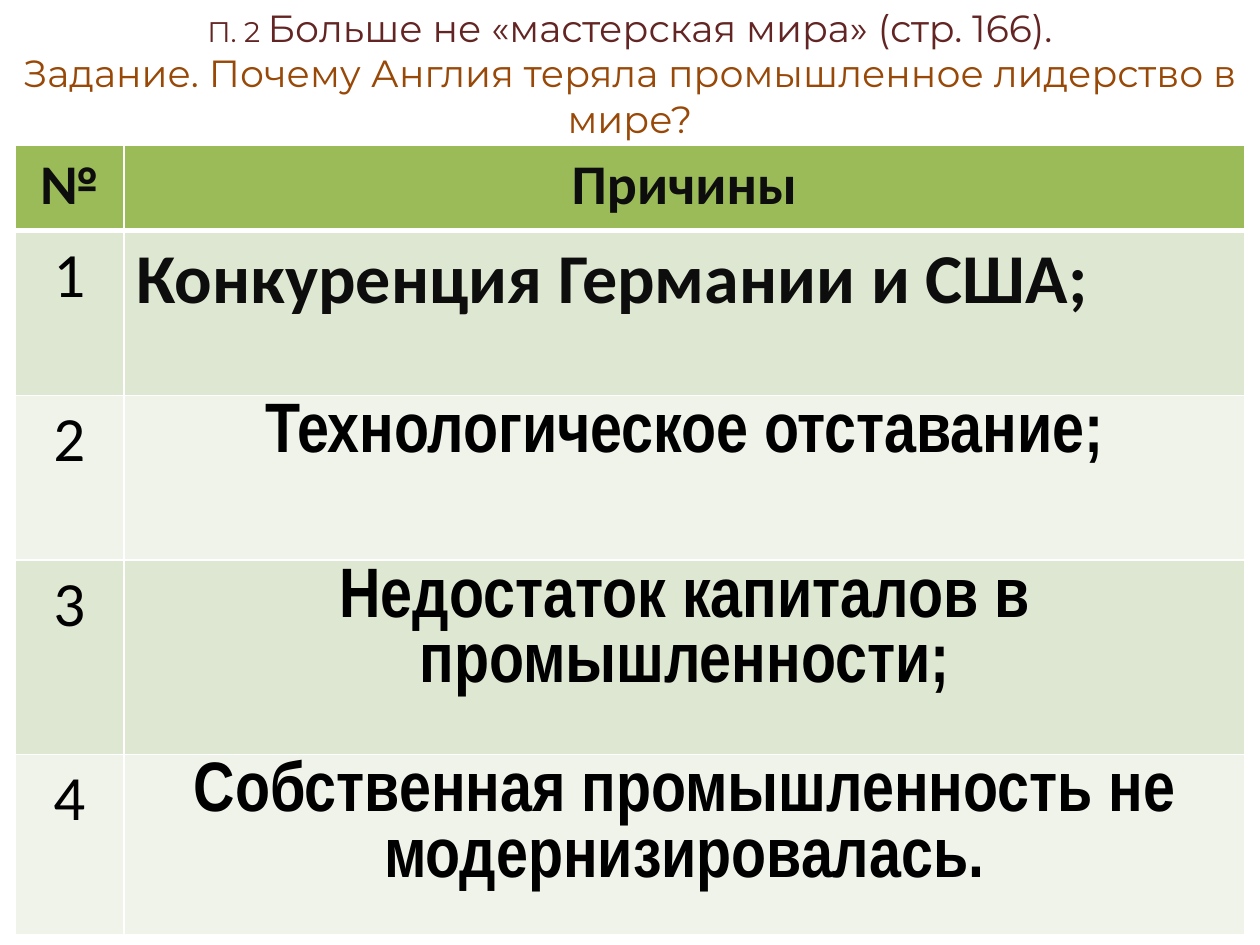
from lxml import etree
from pptx import Presentation
from pptx.dml.color import RGBColor
from pptx.enum.text import MSO_ANCHOR, PP_ALIGN
from pptx.oxml.ns import qn
from pptx.util import Cm, Pt

LEFT, CENTER = PP_ALIGN.LEFT, PP_ALIGN.CENTER
MIDDLE = MSO_ANCHOR.MIDDLE
BLACK, NEAR_BLACK = "000000", "0D0D0D"
GREEN, BANDS = "9BBB59", ("DEE7D1", "EFF3EA")


def style(font, name, size, color, bold=False):
    font.name, font.size, font.bold = name, Pt(size), bold
    font.color.rgb = RGBColor.from_string(color)


def add_borders(cell, top_width, bottom_width):
    """Draw white cell borders; they must precede the fill in the cell's XML."""
    properties = cell._tc.get_or_add_tcPr()
    widths = {"a:lnL": 1, "a:lnR": 1, "a:lnT": top_width, "a:lnB": bottom_width}
    for position, (tag, width) in enumerate(widths.items()):
        line = etree.Element(qn(tag), w=str(Pt(width)))
        fill = etree.SubElement(line, qn("a:solidFill"))
        etree.SubElement(fill, qn("a:srgbClr"), val="FFFFFF")
        properties.insert(position, line)


deck = Presentation()
deck.slide_width, deck.slide_height = Cm(25.4), Cm(19.05)
page = deck.slides.add_slide(deck.slide_layouts[6])

# Title
title = page.shapes.add_textbox(0, Cm(0.49), Cm(25.4), Cm(2.79)).text_frame
title.word_wrap = True
title.vertical_anchor = MIDDLE
title.margin_top, title.margin_bottom = 0, Cm(0.84)
heading, task = title.paragraphs[0], title.add_paragraph()
title_spans = [
    (heading, "П. 2 ", 16.2, "632523"),
    (heading, "Больше не «мастерская мира» (стр. 166).", 21.6, "632523"),
    (task, "Задание. Почему Англия теряла промышленное лидерство в мире?", 21.6, "984807"),
]
for para, text, size, color in title_spans:
    para.alignment = CENTER
    span = para.add_run()
    span.text = text
    style(span.font, "Montserrat", size, color)

# Table of reasons: text, font, colour, alignment
reasons = [
    ("Конкуренция Германии и США;", "Calibri", NEAR_BLACK, LEFT),
    ("Технологическое отставание;", "Arial Narrow", BLACK, CENTER),
    ("Недостаток капиталов в промышленности;", "Arial Narrow", BLACK, CENTER),
    ("Собственная промышленность не модернизировалась.", "Arial Narrow", BLACK, CENTER),
]
column_widths = (2.2, 22.6)
row_heights = (1.72, 3.32, 3.32, 3.92, 3.32)
table = page.shapes.add_table(
    len(row_heights), len(column_widths), Cm(0.3), Cm(2.93),
    Cm(sum(column_widths)), Cm(sum(row_heights))).table
for column, width in zip(table.columns, column_widths):
    column.width = Cm(width)
for row, height in zip(table.rows, row_heights):
    row.height = Cm(height)

for index, text in enumerate(("№", "Причины")):
    para = table.cell(0, index).text_frame.paragraphs[0]
    para.text, para.alignment = text, CENTER
    style(para.font, "Calibri", 32, NEAR_BLACK, True)

for number, (text, font_name, color, alignment) in enumerate(reasons, 1):
    para = table.cell(number, 0).text_frame.paragraphs[0]
    para.text, para.alignment = str(number), CENTER
    style(para.font, "Calibri", 36, BLACK)
    para = table.cell(number, 1).text_frame.paragraphs[0]
    para.text, para.alignment = text, alignment
    style(para.font, font_name, 40, color, True)

for index, row in enumerate(table.rows):
    for cell in row.cells:
        cell.fill.solid()
        cell.fill.fore_color.rgb = RGBColor.from_string(
            BANDS[(index - 1) % 2] if index else GREEN)
        add_borders(cell, 3 if index == 1 else 1, 3 if index == 0 else 1)

deck.save("out.pptx")
